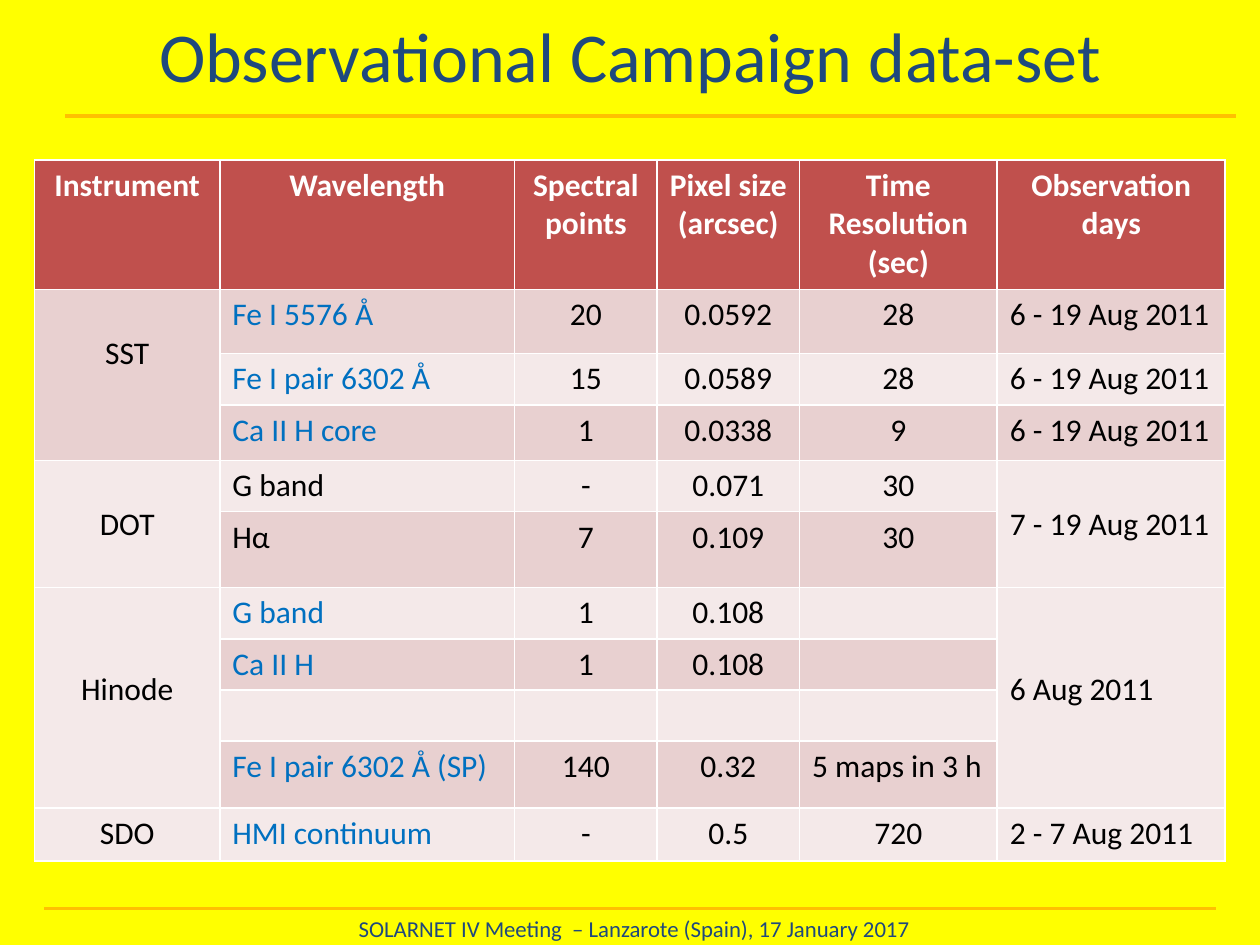
import pptx
import pptx.dml.color
import pptx.enum.shapes
import pptx.enum.text
import pptx.oxml.ns
import pptx.util
from lxml import etree

Pt = pptx.util.Pt
ALIGN = pptx.enum.text.PP_ALIGN
ANCHOR = pptx.enum.text.MSO_ANCHOR
FONT = "Calibri"
NAVY, BLUE, BLACK, WHITE = "1F497D", "0070C0", "000000", "FFFFFF"
YELLOW, ORANGE, RED = "FFFF00", "FFC000", "C0504D"
BANDS = ("F4E9E9", "E8D0D0")
LINE_HEIGHT = 22

HEADER = ["Instrument", "Wavelength", "Spectral points", "Pixel size (arcsec)",
          "Time\nResolution (sec)", "Observation\ndays"]
ROWS = [
    ["SST", "Fe I 5576 Å", "20", "0.0592", "28", "6 - 19 Aug 2011"],
    ["", "Fe I pair 6302 Å", "15", "0.0589", "28", "6 - 19 Aug 2011"],
    ["", "Ca II H core", "1", "0.0338", "9", "6 - 19 Aug 2011"],
    ["DOT", "G band", "-", "0.071", "30", "7 - 19 Aug 2011"],
    ["", "Hα", "7", "0.109", "30", ""],
    ["Hinode", "G band", "1", "0.108", "", "6 Aug 2011"],
    ["", "Ca II H", "1", "0.108", "", ""],
    ["", "", "", "", "", ""],
    ["", "Fe I pair 6302 Å (SP)", "140", "0.32", "5 maps in 3 h", ""],
    ["SDO", "HMI continuum", "-", "0.5", "720", "2 - 7 Aug 2011"],
]
COL_WIDTHS = [105.8, 168.5, 81.4, 81.4, 113, 130.3]
ROW_HEIGHTS = [74, 36.7, 29.5, 31.7, 28.8, 43.2, 29.5, 28.8, 28.8, 38.2, 30.2]
# (first row, last row, column, lines the text is lowered by)
MERGES = [(1, 3, 0, 1), (4, 5, 0, 1), (4, 5, 5, 1), (6, 9, 0, 2), (6, 9, 5, 2)]
BLACK_WAVELENGTH_ROWS = (4, 5)
LEFT_CELLS = [(9, 4)]


def rgb(color):
    return pptx.dml.color.RGBColor.from_string(color)


def write(tf, text, size, color, align, bold=False):
    tf.text = text
    for p in tf.paragraphs:
        p.alignment = align
        for r in p.runs:
            r.font.color.rgb = rgb(color)
            for name, value in {"name": FONT, "size": Pt(size), "bold": bold}.items():
                setattr(r.font, name, value)


def place(sp, box):
    for name, value in zip(("left", "top", "width", "height"), box):
        setattr(sp, name, Pt(value))


def add_rule(s, x1, x2, y):
    line = s.shapes.add_connector(pptx.enum.shapes.MSO_CONNECTOR.STRAIGHT,
                                  Pt(x1), Pt(y), Pt(x2), Pt(y))
    line.line.color.rgb = rgb(ORANGE)
    line.line.width = Pt(2)
    etree.SubElement(line._element.spPr, pptx.oxml.ns.qn("a:effectLst"))


def add_title(s, box, text):
    sp = s.shapes.title
    place(sp, box)
    write(sp.text_frame, text, 40, NAVY, ALIGN.CENTER)
    sp.text_frame.vertical_anchor = ANCHOR.TOP


def add_footer(s, box, text):
    tf = s.shapes.add_textbox(*map(Pt, box)).text_frame
    tf.word_wrap = True
    write(tf, text, 13, NAVY, ALIGN.CENTER)


def fill_cell(cell, row, col, text):
    header = row == 0
    left = not header and (col in (1, 5) or (row, col) in LEFT_CELLS)
    blue = col == 1 and row not in BLACK_WAVELENGTH_ROWS
    color = WHITE if header else BLUE if blue else BLACK
    cell.fill.solid()
    cell.fill.fore_color.rgb = rgb(RED if header else BANDS[row % 2])
    write(cell.text_frame, text, 18, color, ALIGN.LEFT if left else ALIGN.CENTER, header)


def add_campaign_table(s, box):
    table = s.shapes.add_table(len(ROW_HEIGHTS), len(COL_WIDTHS), *map(Pt, box)).table
    for column, width in zip(table.columns, COL_WIDTHS):
        column.width = Pt(width)
    for row, height in zip(table.rows, ROW_HEIGHTS):
        row.height = Pt(height)
    for i, texts in enumerate([HEADER] + ROWS):
        for j, text in enumerate(texts):
            fill_cell(table.cell(i, j), i, j, text)
    for first, last, col, lowered in MERGES:
        cell = table.cell(first, col)
        cell.merge(table.cell(last, col))
        cell.margin_top = Pt(3.6 + lowered * LINE_HEIGHT)


def main():
    prs = pptx.Presentation()
    prs.slide_width, prs.slide_height = Pt(720), Pt(540)
    s = prs.slides.add_slide(prs.slide_layouts[5])
    s.background.fill.solid()
    s.background.fill.fore_color.rgb = rgb(YELLOW)

    add_rule(s, 25.2, 694.8, 519.1)
    add_rule(s, 37.4, 706.3, 66.2)
    add_title(s, (0, 3.6, 720, 55.4), "Observational Campaign data-set")
    add_campaign_table(s, (19.8, 91.4, sum(COL_WIDTHS), sum(ROW_HEIGHTS)))
    add_footer(s, (1.4, 519.1, 721.4, 20.9),
               "SOLARNET IV Meeting  – Lanzarote (Spain), 17 January 2017")
    prs.save("out.pptx")


if __name__ == "__main__":
    main()
